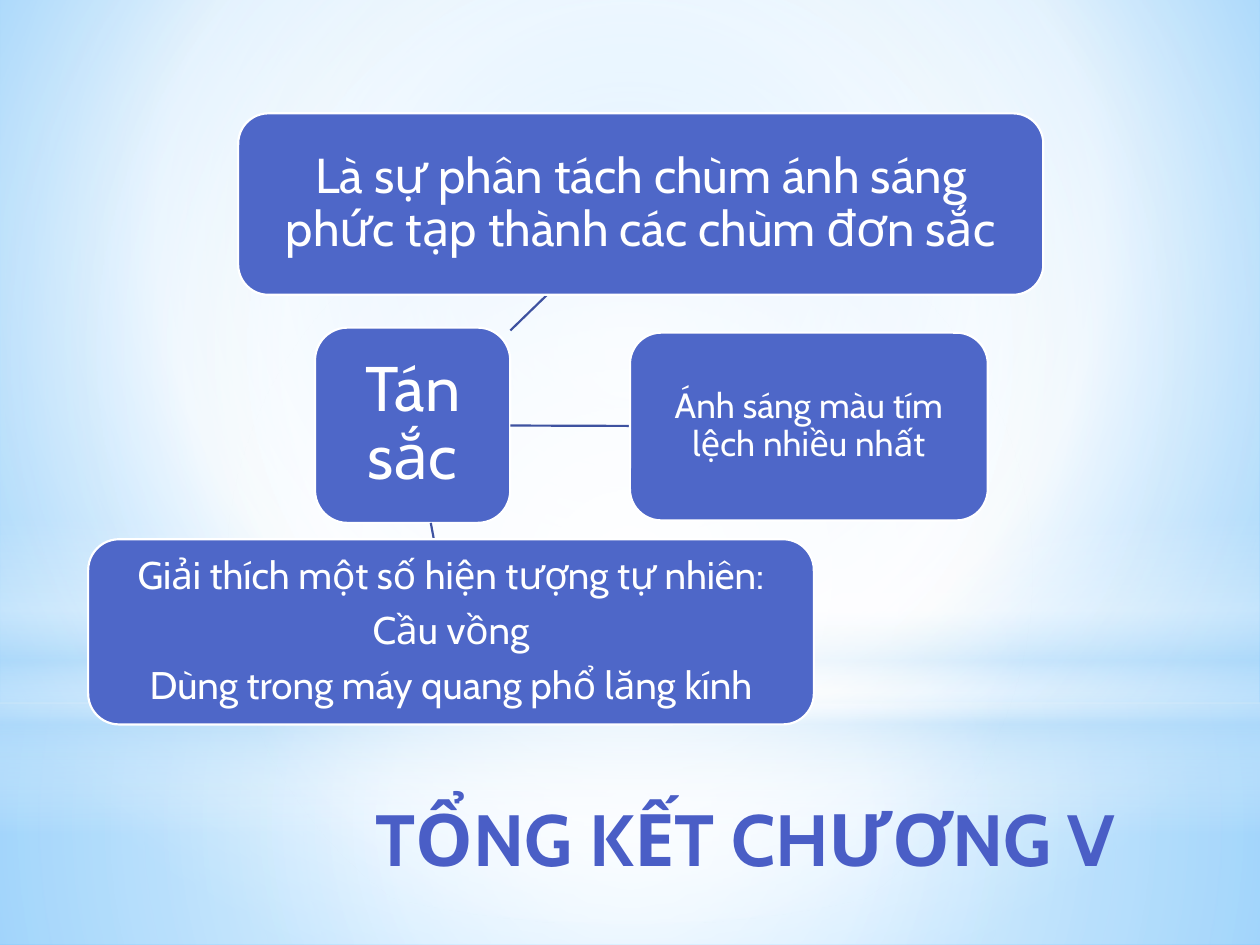
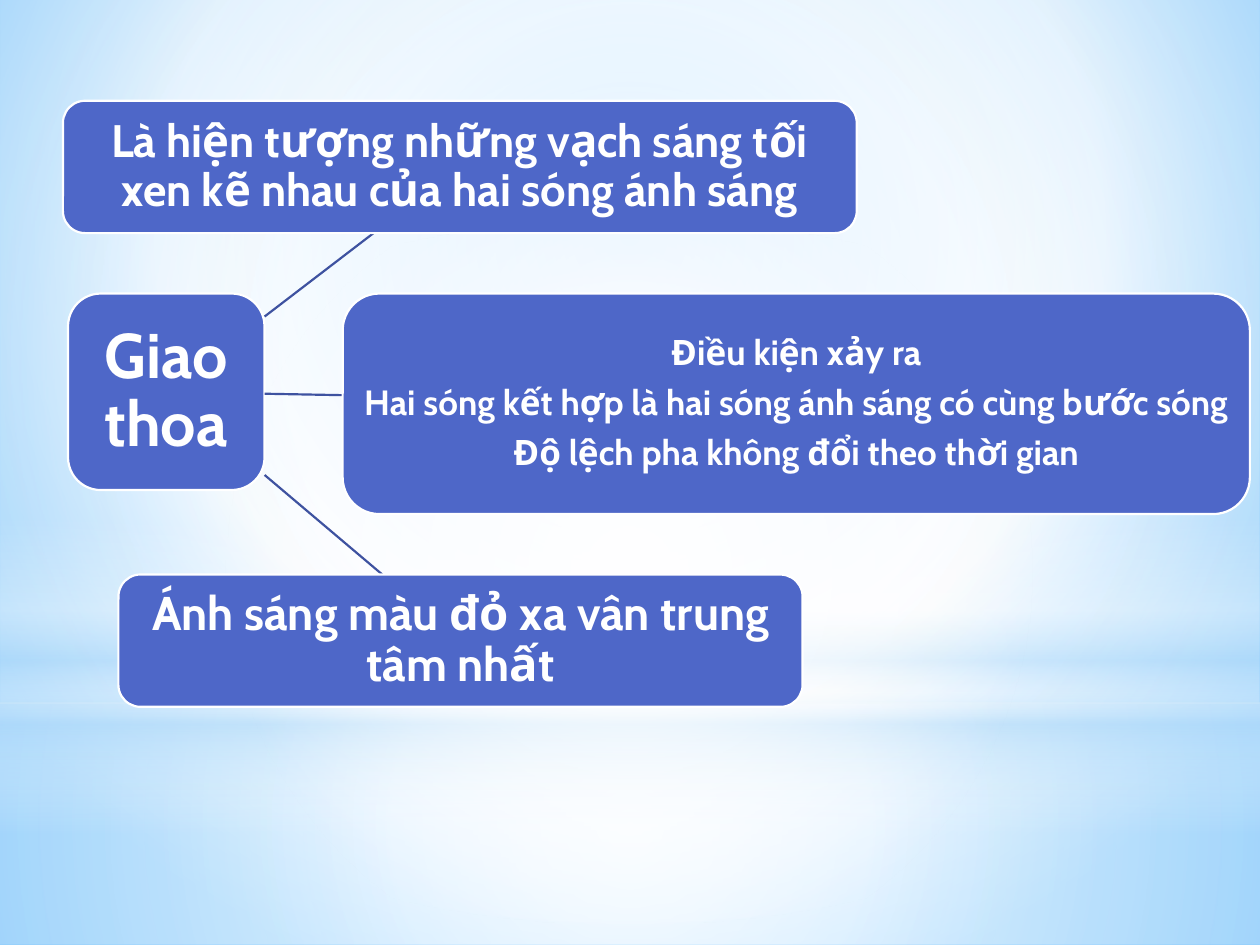
from typing import NamedTuple

from pptx import Presentation
from pptx import util as u
from pptx.dml.color import RGBColor
from pptx.enum import shapes, text
from pptx.oxml import parse_xml
from pptx.oxml.ns import nsdecls

WHITE = RGBColor(0xFF, 0xFF, 0xFF)
INDIGO = RGBColor(0x4E, 0x67, 0xC8)
LINK_BLUE = RGBColor(0x3E, 0x52, 0xA0)
MIST = RGBColor(0xB4, 0xDC, 0xFA)
SKY = RGBColor(0x9E, 0xD5, 0xFF)
AZURE = RGBColor(0x5B, 0xB9, 0xFF)

FONT = "Cabin"
COLUMNS, ROWS = 100, 75
WIDTH, HEIGHT = u.Inches(10), u.Inches(7.5)
OUTLINE = u.Pt(1.25)


class Stop(NamedTuple):
    position: int
    color: RGBColor
    opacity: int = 100


class Gradient(NamedTuple):
    stops: list[Stop]
    focus: tuple[int, int, int, int] | None = None


class Area(NamedTuple):
    left: float
    top: float
    width: float
    height: float

    @property
    def center(self) -> tuple[float, float]:
        return self.left + self.width / 2, self.top + self.height / 2

    def edge_toward(self, target: "Area") -> tuple[float, float]:
        (x, y), (target_x, target_y) = self.center, target.center
        dx, dy = target_x - x, target_y - y
        reach = 1 / max(abs(dx) / (self.width / 2), abs(dy) / (self.height / 2))
        return x + dx * reach, y + dy * reach


class Glow(NamedTuple):
    outline: shapes.MSO_SHAPE
    area: Area
    gradient: Gradient


class Idea(NamedTuple):
    area: Area
    size: float
    lines: list[str]
    inset: float


class MindMap(NamedTuple):
    hub: Idea
    branches: list[Idea]
    bold: bool = False
    title: str = ""


MIDDLE = (50, 50, 50, 50)
BACKDROP = Gradient([Stop(0, SKY), Stop(60, WHITE), Stop(100, AZURE)], (20, 10, 20, 60))
TITLE_AREA = Area(18.3, 62.5, 71.2, 12.5)
TITLE_GRADIENT = Gradient([
    Stop(0, RGBColor(0x71, 0x7F, 0xD2)),
    Stop(49, RGBColor(0x4A, 0x5E, 0xC6)),
    Stop(50, RGBColor(0x32, 0x4C, 0xB5)),
    Stop(92, RGBColor(0x31, 0x47, 0x9D)),
    Stop(100, RGBColor(0x30, 0x46, 0x9A)),
])
HORIZON = 55.8

GLOWS = [
    Glow(shapes.MSO_SHAPE.RECTANGLE, Area(0, HORIZON, COLUMNS, ROWS - HORIZON),
         Gradient([Stop(0, WHITE, 91), Stop(37, WHITE, 76), Stop(100, MIST, 79)], MIDDLE)),
    Glow(shapes.MSO_SHAPE.RECTANGLE, Area(0, 0, COLUMNS, HORIZON),
         Gradient([Stop(0, WHITE, 89), Stop(48, WHITE, 62), Stop(100, MIST, 79)], MIDDLE)),
    Glow(shapes.MSO_SHAPE.RECTANGLE, Area(0, 41.2, COLUMNS, 25),
         Gradient([Stop(0, WHITE, 0), Stop(29, WHITE, 30), Stop(45, MIST, 40),
                   Stop(55, WHITE, 26), Stop(65, MIST, 60), Stop(100, WHITE, 0)])),
    Glow(shapes.MSO_SHAPE.OVAL, Area(0, 17.5, COLUMNS, HORIZON),
         Gradient([Stop(0, WHITE), Stop(56, WHITE, 0)], MIDDLE)),
]

MAPS = [
    MindMap(
        title="TỔNG KẾT CHƯƠNG V",
        hub=Idea(Area(25, 26, 15.5, 15.5), 36, ["Tán sắc"], 1),
        branches=[
            Idea(Area(50, 26.4, 28.4, 14.9), 20, ["Ánh sáng màu tím lệch nhiều nhất"], 0.6),
            Idea(Area(18.9, 9, 63.9, 14.4), 28,
                 ["Là sự phân tách chùm ánh sáng phức tạp thành các chùm đơn sắc"], 0.8),
            Idea(Area(7, 42.8, 57.6, 14.7), 22,
                 ["Giải thích một số hiện tượng tự nhiên:", "Cầu vồng",
                  "Dùng trong máy quang phổ lăng kính"], 0.6),
        ],
    ),
    MindMap(
        bold=True,
        hub=Idea(Area(5.4, 23.3, 15.6, 15.6), 36, ["Giao thoa"], 1),
        branches=[
            Idea(Area(5, 8, 63, 10.5), 26,
                 ["Là hiện tượng những vạch sáng tối xen kẽ nhau của hai sóng ánh sáng"], 0.7),
            Idea(Area(27.2, 23.3, 72, 17.5), 20,
                 ["Điều kiện xảy ra",
                  "Hai sóng kết hợp là hai sóng ánh sáng có cùng bước sóng",
                  "Độ lệch pha không đổi theo thời gian"], 0.6),
            Idea(Area(9.4, 45.6, 54.3, 10.5), 27, ["Ánh sáng màu đỏ xa vân trung tâm nhất"], 0.7),
        ],
    ),
]


def across(columns: float) -> u.Emu:
    return u.Emu(round(WIDTH * columns / COLUMNS))


def down(rows: float) -> u.Emu:
    return u.Emu(round(HEIGHT * rows / ROWS))


def place(area: Area) -> tuple[u.Emu, u.Emu, u.Emu, u.Emu]:
    return across(area.left), down(area.top), across(area.width), down(area.height)


def apply_gradient(fill, owner, gradient: Gradient) -> None:
    fill.gradient()
    stops = "".join(
        f'<a:gs pos="{stop.position * 1000}"><a:srgbClr val="{stop.color}">'
        f'<a:alpha val="{stop.opacity * 1000}"/></a:srgbClr></a:gs>'
        for stop in gradient.stops
    )
    if gradient.focus:
        left, top, right, bottom = (share * 1000 for share in gradient.focus)
        direction = (f'<a:path path="circle"><a:fillToRect l="{left}" t="{top}" '
                     f'r="{right}" b="{bottom}"/></a:path>')
    else:
        direction = '<a:lin ang="5400000" scaled="0"/>'
    default = owner.element.xpath(".//a:gradFill")[0]
    default.getparent().replace(default, parse_xml(
        f'<a:gradFill {nsdecls("a")} rotWithShape="1"><a:gsLst>{stops}</a:gsLst>'
        f'{direction}</a:gradFill>'))


def draw_glow(slide, glow: Glow) -> None:
    light = slide.shapes.add_shape(glow.outline, *place(glow.area))
    light.shadow.inherit = False
    light.line.fill.background()
    apply_gradient(light.fill, light, glow.gradient)


def draw_title(slide, wording: str) -> None:
    title = slide.shapes.add_textbox(*place(TITLE_AREA))
    title.text_frame.word_wrap = True
    paragraph = title.text_frame.paragraphs[0]
    paragraph.alignment = text.PP_ALIGN.RIGHT
    run = paragraph.add_run()
    run.text = wording
    run.font.name, run.font.size, run.font.bold = FONT, u.Pt(41.4), True
    apply_gradient(run.font.fill, title, TITLE_GRADIENT)


def draw_idea(slide, idea: Idea, bold: bool) -> None:
    bubble = slide.shapes.add_shape(shapes.MSO_SHAPE.ROUNDED_RECTANGLE, *place(idea.area))
    bubble.shadow.inherit = False
    bubble.fill.solid()
    bubble.fill.fore_color.rgb = INDIGO
    bubble.line.color.rgb = WHITE
    bubble.line.width = OUTLINE
    frame = bubble.text_frame
    frame.word_wrap = True
    frame.vertical_anchor = text.MSO_ANCHOR.MIDDLE
    frame.margin_left = frame.margin_right = across(idea.inset)
    frame.margin_top = frame.margin_bottom = down(idea.inset)
    for index, line in enumerate(idea.lines):
        paragraph = frame.add_paragraph() if index else frame.paragraphs[0]
        paragraph.alignment = text.PP_ALIGN.CENTER
        paragraph.line_spacing = 0.9
        paragraph.space_after = u.Pt(idea.size * 0.35)
        run = paragraph.add_run()
        run.text = line
        run.font.name, run.font.size, run.font.bold = FONT, u.Pt(idea.size), bold
        run.font.color.rgb = WHITE


def draw_link(slide, hub: Area, branch: Area) -> None:
    start_x, start_y = hub.edge_toward(branch)
    end_x, end_y = branch.edge_toward(hub)
    link = slide.shapes.add_connector(
        shapes.MSO_CONNECTOR.STRAIGHT,
        across(start_x), down(start_y), across(end_x), down(end_y))
    link.line.color.rgb = LINK_BLUE
    link.line.width = OUTLINE
    link.element.spPr.append(parse_xml(f'<a:effectLst {nsdecls("a")}/>'))


def draw_map(slide, mind_map: MindMap) -> None:
    for glow in GLOWS:
        draw_glow(slide, glow)
    if mind_map.title:
        draw_title(slide, mind_map.title)
    draw_idea(slide, mind_map.hub, mind_map.bold)
    for branch in mind_map.branches:
        draw_link(slide, mind_map.hub.area, branch.area)
        draw_idea(slide, branch, mind_map.bold)


def main() -> None:
    deck = Presentation()
    deck.slide_width, deck.slide_height = WIDTH, HEIGHT
    master = deck.slide_master
    apply_gradient(master.background.fill, master, BACKDROP)
    for mind_map in MAPS:
        draw_map(deck.slides.add_slide(deck.slide_layouts[6]), mind_map)
    deck.save("out.pptx")


if __name__ == "__main__":
    main()
